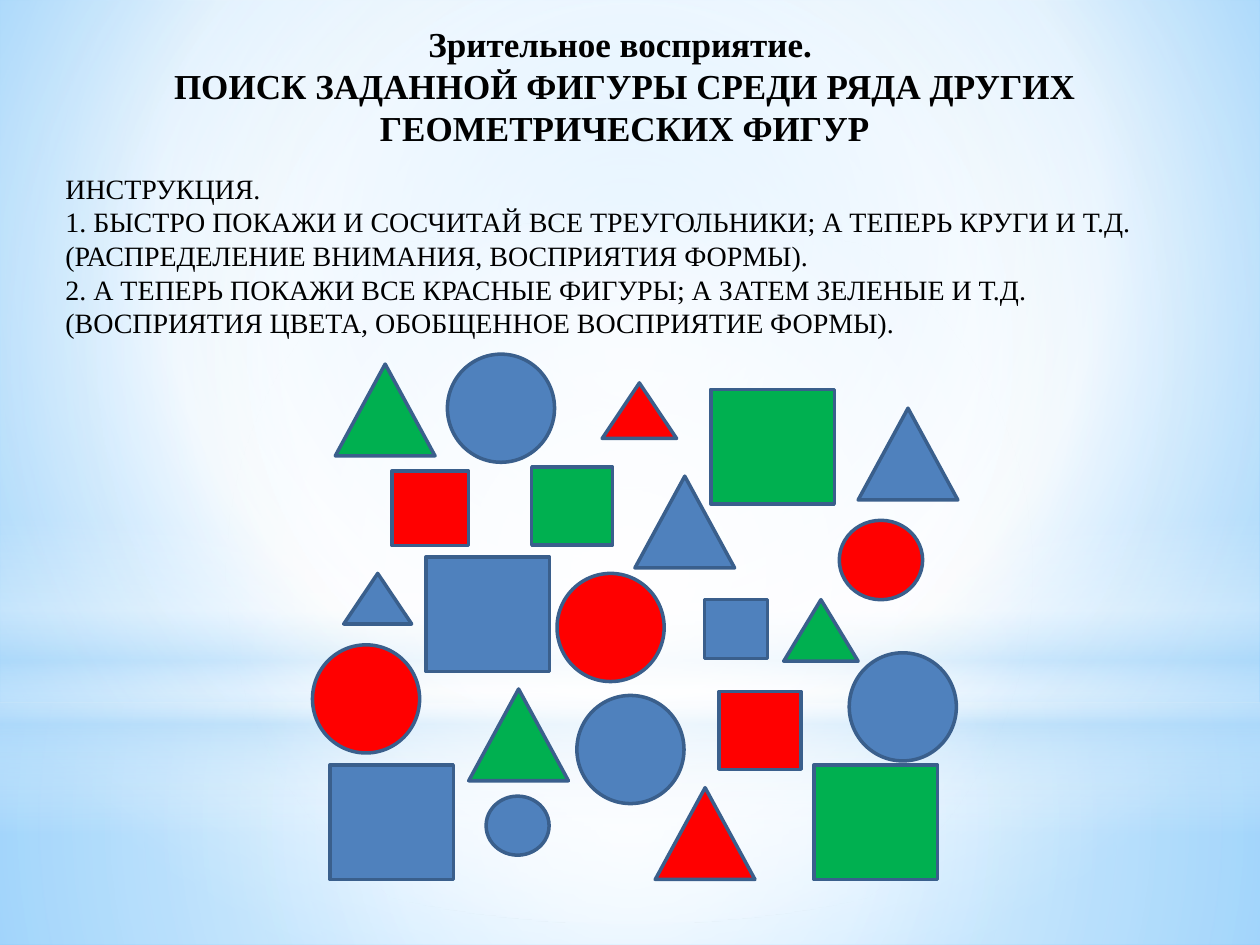
from lxml.etree import SubElement
from pptx import Presentation
from pptx.dml.color import RGBColor
from pptx.enum.shapes import MSO_SHAPE as Preset
from pptx.enum.text import MSO_ANCHOR as Anchor, PP_ALIGN as Align
from pptx.oxml.ns import qn
from pptx.util import Cm, Pt

COLORS = {
    "text": "000000", "outline": "3A5F8C",
    "blue": "4F81BD", "red": "FF0000", "green": "00B050",
    "white": "FFFFFF", "mist": "B4DCFA", "sky": "9ED5FF", "azure": "5BB9FF",
}
FONT = "Times New Roman"
CENTER = (50, 50, 50, 50)

TITLE = ("Зрительное восприятие. \v"
         "ПОИСК ЗАДАННОЙ ФИГУРЫ СРЕДИ РЯДА ДРУГИХ ГЕОМЕТРИЧЕСКИХ ФИГУР")
INSTRUCTION = (
    "ИНСТРУКЦИЯ. \v"
    "1. БЫСТРО ПОКАЖИ И СОСЧИТАЙ ВСЕ ТРЕУГОЛЬНИКИ; А ТЕПЕРЬ КРУГИ И Т.Д. "
    "(РАСПРЕДЕЛЕНИЕ ВНИМАНИЯ, ВОСПРИЯТИЯ ФОРМЫ). \v"
    "2. А ТЕПЕРЬ ПОКАЖИ ВСЕ КРАСНЫЕ ФИГУРЫ; А ЗАТЕМ ЗЕЛЕНЫЕ И Т.Д. "
    "(ВОСПРИЯТИЯ ЦВЕТА, ОБОБЩЕННОЕ ВОСПРИЯТИЕ ФОРМЫ).")

BACKDROP = [
    (Preset.RECTANGLE, 14.17, 4.88,
     [(0, "white", 91), (37, "white", 76), (100, "mist", 79)], CENTER),
    (Preset.RECTANGLE, 0, 14.17,
     [(0, "white", 89), (48, "white", 62), (100, "mist", 79)], CENTER),
    (Preset.RECTANGLE, 10.46, 6.35,
     [(0, "white", 0), (29, "white", 30), (45, "mist", 40),
      (55, "white", 26), (65, "mist", 60), (100, "white", 0)], None),
    (Preset.OVAL, 4.45, 14.17, [(0, "white", 100), (56, "white", 0)], CENTER),
]

CIRCLE = (2.16, 2.18)
SQUARE = (2.49, 2.31)
TRIANGLE = (2.01, 1.85)
SMALL = (1.27, 1.19)
FIGURES = {
    Preset.OVAL: [
        ("blue", 9.02, 7.14, CIRCLE), ("red", 16.92, 10.49, (1.68, 1.6)),
        ("blue", 11.63, 14.02, CIRCLE), ("red", 6.3, 13, CIRCLE),
        ("blue", 17.12, 13.16, CIRCLE), ("blue", 9.8, 16.05, SMALL),
        ("red", 11.23, 11.56, CIRCLE),
    ],
    Preset.RECTANGLE: [
        ("green", 14.33, 7.85, SQUARE), ("green", 10.72, 9.42, (1.63, 1.57)),
        ("blue", 8.59, 11.23, SQUARE), ("red", 14.5, 13.94, (1.65, 1.57)),
        ("red", 7.9, 9.5, (1.55, 1.5)), ("green", 16.41, 15.42, SQUARE),
        ("blue", 6.65, 15.42, SQUARE), ("blue", 14.2, 12.09, SMALL),
    ],
    Preset.ISOSCELES_TRIANGLE: [
        ("blue", 17.3, 8.23, TRIANGLE), ("green", 15.8, 12.09, (1.5, 1.24)),
        ("red", 12.14, 7.72, (1.5, 1.12)), ("green", 9.45, 13.89, TRIANGLE),
        ("green", 6.76, 7.34, TRIANGLE), ("blue", 12.8, 9.6, TRIANGLE),
        ("red", 13.21, 15.88, TRIANGLE), ("blue", 6.93, 11.56, (1.37, 1.02)),
    ],
}


def rgb(name):
    return RGBColor.from_string(COLORS[name])


def set_gradient(fill, holder, stops, focus):
    fill.gradient()
    gradient = holder.find(qn("a:gradFill"))
    for child in list(gradient):
        gradient.remove(child)
    stop_list = SubElement(gradient, qn("a:gsLst"))
    for position, color, alpha in stops:
        stop = SubElement(stop_list, qn("a:gs"), pos=str(position * 1000))
        tone = SubElement(stop, qn("a:srgbClr"), val=COLORS[color])
        if alpha < 100:
            SubElement(tone, qn("a:alpha"), val=str(alpha * 1000))
    if focus is None:
        SubElement(gradient, qn("a:lin"), ang="5400000", scaled="0")
    else:
        radial = SubElement(gradient, qn("a:path"), path="circle")
        edges = {side: str(share * 1000) for side, share in zip("ltrb", focus)}
        SubElement(radial, qn("a:fillToRect"), **edges)


def paint_background(slide):
    fill = slide.background.fill
    holder = slide.element.cSld.find(qn("p:bg")).find(qn("p:bgPr"))
    stops = [(0, "sky", 100), (60, "white", 100), (100, "azure", 100)]
    set_gradient(fill, holder, stops, (20, 10, 20, 60))


def add_glow(slide, preset, top, height, stops, focus):
    glow = slide.shapes.add_shape(preset, 0, Cm(top), Cm(25.4), Cm(height))
    glow.shadow.inherit = False
    glow.line.fill.background()
    set_gradient(glow.fill, glow.element.spPr, stops, focus)


def add_text(slide, box, text, size, bold, align):
    frame = slide.shapes.add_textbox(*map(Cm, box)).text_frame
    frame.word_wrap = True
    frame.vertical_anchor = Anchor.TOP
    paragraph = frame.paragraphs[0]
    paragraph.text = text
    paragraph.alignment = align
    font = paragraph.font
    font.name, font.size, font.bold = FONT, Pt(size), bold
    font.color.rgb = rgb("text")


def add_figure(group, preset, color, left, top, size):
    figure = group.shapes.add_shape(preset, *map(Cm, (left, top, *size)))
    figure.shadow.inherit = False
    figure.fill.solid()
    figure.fill.fore_color.rgb = rgb(color)
    figure.line.color.rgb = rgb("outline")
    figure.line.width = Pt(2)


def main():
    deck = Presentation()
    deck.slide_width, deck.slide_height = Cm(25.4), Cm(19.05)
    slide = deck.slides.add_slide(deck.slide_layouts[6])
    paint_background(slide)
    for glow in BACKDROP:
        add_glow(slide, *glow)
    add_text(slide, (1.09, 0.33, 23.01, 3.18), TITLE, 20, True, Align.CENTER)
    group = slide.shapes.add_group_shape()
    for preset, figures in FIGURES.items():
        for figure in figures:
            add_figure(group, preset, *figure)
    add_text(slide, (1.07, 3.33, 23.8, 3.68), INSTRUCTION, 16, False, Align.LEFT)
    deck.save("out.pptx")


if __name__ == "__main__":
    main()
